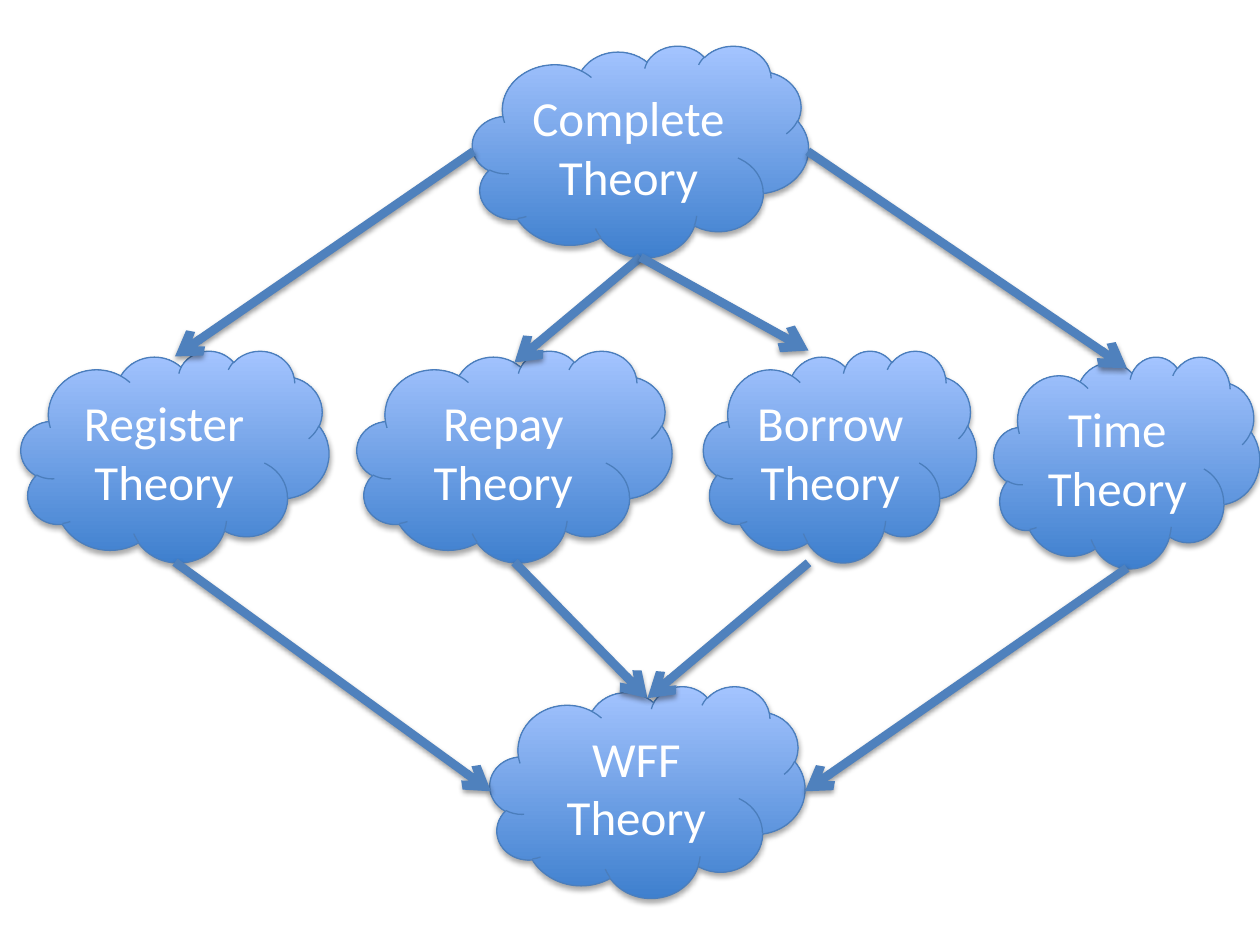
import pptx
import pptx.dml.color
import pptx.enum.shapes
import pptx.enum.text
import pptx.oxml
import pptx.oxml.ns
import pptx.util

Pt = pptx.util.Pt
RGBColor = pptx.dml.color.RGBColor

THEME = {
    "font": "Calibri",
    "text_size": 28,
    "text": RGBColor.from_string("FFFFFF"),
    "cloud_bottom": RGBColor.from_string("3F80CE"),
    "cloud_top": RGBColor.from_string("A4C4FF"),
    "outline": RGBColor.from_string("4B7EBC"),
    "arrow": RGBColor.from_string("4F81BD"),
    "shadow": "000000",
}

CLOUD_HEIGHT = 121
MIDDLE_TOP = 200.3
# name: left, top, width
CLOUDS = {
    "Complete": (270, 26, 192),
    "Register": (12, MIDDLE_TOP, 176),
    "Borrow": (402, MIDDLE_TOP, 156),
    "Time": (568, 203.7, 151.8),
    "Repay": (204, MIDDLE_TOP, 180),
    "WFF": (280, 392, 180),
}

COMPLETE_BOTTOM = (366, 147)
WFF_TOP = (370, 399)
ARROWS = [
    ((100, 321.2), (280.6, 452.2)),
    ((294, 321.2), WFF_TOP),
    ((462, 321.6), WFF_TOP),
    ((644, 324.6), (460, 452.2)),
    ((270.6, 86.5), (100, 203.7)),
    (COMPLETE_BOTTOM, (294, 207.2)),
    (COMPLETE_BOTTOM, (462, MIDDLE_TOP)),
    ((461.6, 86.5), (644, 210.4)),
]


def add_shadow(shape, distance, opacity):
    """Append a soft downward shadow; distance in points, opacity in percent."""
    namespace = pptx.oxml.ns.nsdecls("a")
    shape._element.spPr.append(pptx.oxml.parse_xml(
        f'<a:effectLst {namespace}><a:outerShdw blurRad="{Pt(3.1)}" '
        f'dist="{Pt(distance)}" dir="5400000" rotWithShape="0">'
        f'<a:srgbClr val="{THEME["shadow"]}"><a:alpha val="{opacity * 1000}"/>'
        f'</a:srgbClr></a:outerShdw></a:effectLst>'))


presentation = pptx.Presentation()
presentation.slide_width = Pt(720)
presentation.slide_height = Pt(540)
slide = presentation.slides.add_slide(presentation.slide_layouts[6])

for name, (left, top, width) in CLOUDS.items():
    cloud = slide.shapes.add_shape(
        pptx.enum.shapes.MSO_SHAPE.CLOUD,
        Pt(left), Pt(top), Pt(width), Pt(CLOUD_HEIGHT))
    cloud.fill.gradient()
    cloud.fill.gradient_angle = 90
    bottom_stop, top_stop = cloud.fill.gradient_stops
    bottom_stop.color.rgb = THEME["cloud_bottom"]
    bottom_stop.position = 0
    top_stop.color.rgb = THEME["cloud_top"]
    top_stop.position = 1
    cloud.line.color.rgb = THEME["outline"]
    cloud.line.width = Pt(0.75)
    add_shadow(cloud, 1.8, 35)

    text_frame = cloud.text_frame
    text_frame.text = f"{name}\nTheory"
    text_frame.word_wrap = True
    text_frame.vertical_anchor = pptx.enum.text.MSO_ANCHOR.MIDDLE
    for paragraph in text_frame.paragraphs:
        paragraph.alignment = pptx.enum.text.PP_ALIGN.CENTER
        font = paragraph.runs[0].font
        font.name = THEME["font"]
        font.size = Pt(THEME["text_size"])
        font.color.rgb = THEME["text"]

for start, end in ARROWS:
    arrow = slide.shapes.add_connector(
        pptx.enum.shapes.MSO_CONNECTOR.STRAIGHT,
        *(Pt(value) for value in start + end))
    arrow.line.color.rgb = THEME["arrow"]
    arrow.line.width = Pt(5)
    arrow.line._get_or_add_ln().append(pptx.oxml.parse_xml(
        f'<a:tailEnd {pptx.oxml.ns.nsdecls("a")} type="arrow"/>'))
    add_shadow(arrow, 1.6, 38)

presentation.save("out.pptx")
